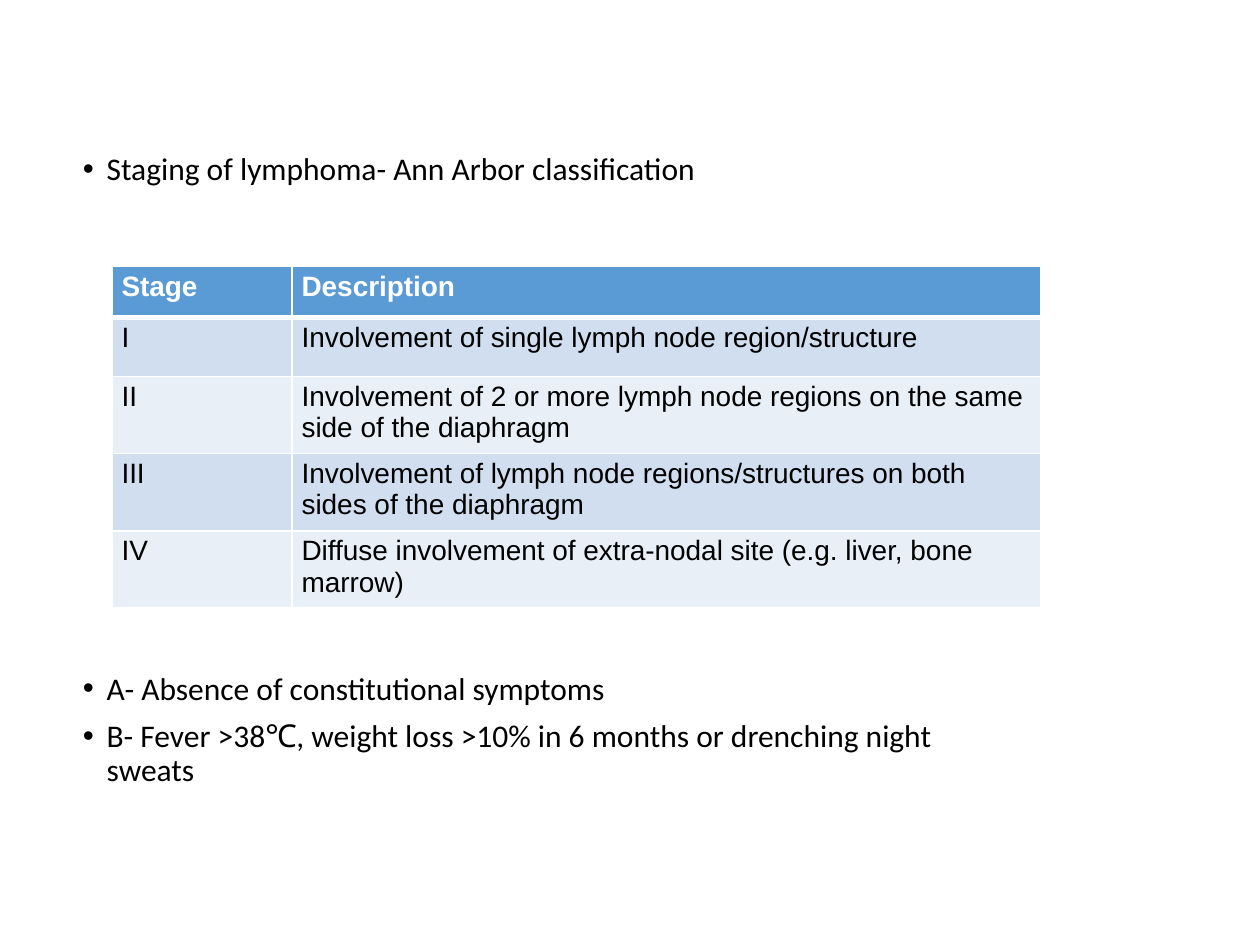
import pptx
import pptx.util
import pptx.dml.color
import pptx.oxml
import pptx.oxml.ns

Cm, Pt = pptx.util.Cm, pptx.util.Pt
RGB = pptx.dml.color.RGBColor.from_string
qn = pptx.oxml.ns.qn

# Content
HEAD = ["Staging of lymphoma- Ann Arbor classification"]
NOTES = [
    "A- Absence of constitutional symptoms",
    "B- Fever >38℃, weight loss >10% in 6 months or drenching night sweats",
]
ROWS = [
    ("Stage", "Description"),
    ("I", "Involvement of single lymph node region/structure"),
    ("II", "Involvement of 2 or more lymph node regions on the same "
           "side of the diaphragm"),
    ("III", "Involvement of lymph node regions/structures on both "
            "sides of the diaphragm"),
    ("IV", "Diffuse involvement of extra-nodal site (e.g. liver, bone marrow)"),
]
COLORS = {"text": "000000", "white": "FFFFFF", "head": "5B9BD5",
          "odd": "D0DEEF", "even": "E9EFF7"}
WIDTHS = [3.63, 15.09]
HEIGHTS = [1.04] + [1.19] * 4


def style(font, name, size, color, bold=False):
    font.name, font.size, font.bold = name, Pt(size), bold
    font.color.rgb = RGB(COLORS[color])


def add_list(slide, top, height, items):
    """Bulleted text with a hanging indent."""
    box = slide.shapes.add_textbox(Cm(1.42), Cm(top), Cm(17.91), Cm(height))
    frame = box.text_frame
    frame.word_wrap = True
    for i, item in enumerate(items):
        para = frame.add_paragraph() if i else frame.paragraphs[0]
        para.text = item
        para.line_spacing = 0.9
        if i:
            para.space_before = Pt(7.5)
        props = para._p.get_or_add_pPr()
        props.set("marL", str(Cm(0.48)))
        props.set("indent", str(-Cm(0.48)))
        for tag, key, value in (("a:buFont", "typeface", "Arial"),
                                ("a:buChar", "char", "•")):
            mark = pptx.oxml.ns.qn(tag)
            props.append(props.makeelement(mark, {key: value}))
        style(para.runs[0].font, "Calibri", 18, "text")


def add_edges(cell, base):
    """White cell borders; base is the bottom line width in points."""
    props = cell._tc.get_or_add_tcPr()
    edges = (("L", 1), ("R", 1), ("T", 1), ("B", base))
    for i, (side, width) in enumerate(edges):
        line = props.makeelement(qn("a:ln" + side), {"w": str(Pt(width))})
        fill = line.makeelement(qn("a:solidFill"), {})
        fill.append(fill.makeelement(qn("a:srgbClr"), {"val": COLORS["white"]}))
        line.append(fill)
        props.insert(i, line)


def add_stages(slide):
    table = slide.shapes.add_table(
        len(ROWS), len(WIDTHS), Cm(2.26), Cm(5.36),
        Cm(sum(WIDTHS)), Cm(sum(HEIGHTS))).table
    for col, width in zip(table.columns, WIDTHS):
        col.width = Cm(width)
    for r, row in enumerate(ROWS):
        table.rows[r].height = Cm(HEIGHTS[r])
        top = r == 0
        shade = "head" if top else "odd" if r % 2 else "even"
        for c, text in enumerate(row):
            cell = table.cell(r, c)
            cell.text_frame.text = text
            cell.margin_left = cell.margin_right = Cm(0.19)
            cell.margin_top = cell.margin_bottom = Cm(0.1)
            cell.fill.solid()
            cell.fill.fore_color.rgb = RGB(COLORS[shade])
            add_edges(cell, 3 if top else 1)
            style(cell.text_frame.paragraphs[0].runs[0].font, "Arial", 16,
                  "white" if top else "text", top)


def main():
    deck = pptx.Presentation()
    deck.slide_width, deck.slide_height = Cm(25.4), Cm(19.05)
    slide = deck.slides.add_slide(deck.slide_layouts[6])
    add_list(slide, 2.97, 1, HEAD)
    add_stages(slide)
    add_list(slide, 13.44, 2.8, NOTES)
    deck.save("out.pptx")


if __name__ == "__main__":
    main()
